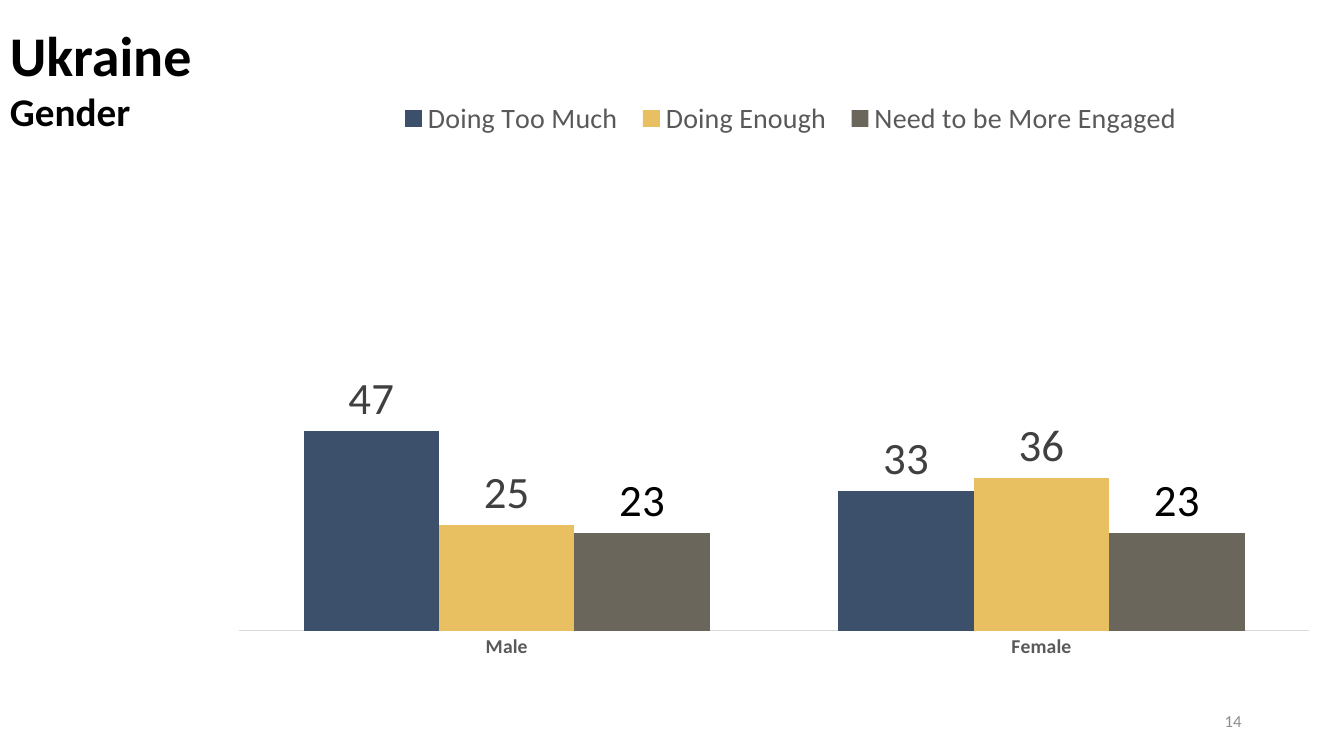
"""Build the Ukraine by gender column chart slide."""
import lxml.etree
import pptx
import pptx.chart.data
import pptx.dml.color
import pptx.enum.chart
import pptx.enum.text
import pptx.oxml
import pptx.oxml.ns
import pptx.util

Pt = pptx.util.Pt
qn = pptx.oxml.ns.qn


def rgb(color):
    return pptx.dml.color.RGBColor.from_string(color)


class Deck:
    font_name = "Calibri"
    text_color = "000000"
    axis_color = "595959"

    def __init__(self, width, height):
        self.prs = pptx.Presentation()
        self.prs.slide_width, self.prs.slide_height = Pt(width), Pt(height)
        self.s = self.prs.slides.add_slide(self.prs.slide_layouts[6])

    def style(self, font, size, color, bold=False):
        font.name = self.font_name
        font.size = Pt(size)
        font.bold = bold
        font.color.rgb = rgb(color)

    def text(self, box, lines, color=None, bold=False, align="LEFT", anchor="TOP"):
        tf = self.s.shapes.add_textbox(*map(Pt, box)).text_frame
        tf.word_wrap = True
        tf.vertical_anchor = pptx.enum.text.MSO_ANCHOR[anchor]
        tf.text = "\n".join(text for text, size in lines)
        for p, (text, size) in zip(tf.paragraphs, lines):
            p.alignment = pptx.enum.text.PP_ALIGN[align]
            for r in p.runs:
                self.style(r.font, size, color or self.text_color, bold)

    def layout(self, parent, index, box, inner=False):
        for old in parent.findall(qn("c:layout")):
            parent.remove(old)
        layout = parent.makeelement(qn("c:layout"))
        parent.insert(index, layout)
        manual = lxml.etree.SubElement(layout, qn("c:manualLayout"))
        settings = [("layoutTarget", "inner")] if inner else []
        settings += [("xMode", "edge"), ("yMode", "edge"), *zip("xywh", box)]
        for tag, value in settings:
            lxml.etree.SubElement(manual, qn("c:" + tag)).set("val", str(value))

    def columns(self, box, categories, series, plot_box, legend_box):
        data = pptx.chart.data.CategoryChartData()
        data.categories = categories
        for name, values, color, label_color in series:
            data.add_series(name, values)
        kind = pptx.enum.chart.XL_CHART_TYPE.COLUMN_CLUSTERED
        chart = self.s.shapes.add_chart(kind, *map(Pt, box), data).chart
        self.style(chart.font, 10, self.text_color)
        chart.has_title = False

        axis = chart.category_axis
        axis.major_tick_mark = pptx.enum.chart.XL_TICK_MARK.NONE
        axis.format.line.color.rgb = rgb("D9D9D9")
        axis.format.line.width = Pt(0.75)
        self.style(axis.tick_labels.font, 14, self.axis_color, True)
        value_axis = chart.value_axis
        value_axis.minimum_scale, value_axis.maximum_scale = 0, 100
        value_axis.has_major_gridlines = False
        value_axis.visible = False

        chart.has_legend = True
        legend = chart.legend
        legend.position = pptx.enum.chart.XL_LEGEND_POSITION.TOP
        legend.include_in_layout = False
        self.style(legend.font, 20, self.axis_color)

        plot = chart.plots[0]
        plot.gap_width, plot.overlap = 95, 0
        plot.vary_by_categories = False
        for ser, (name, values, color, label_color) in zip(plot.series, series):
            ser.format.fill.solid()
            ser.format.fill.fore_color.rgb = rgb(color)
            labels = ser.data_labels
            labels.show_value = True
            labels.position = pptx.enum.chart.XL_LABEL_POSITION.OUTSIDE_END
            self.style(labels.font, 32, label_color)

        plot_area = chart.element.find(".//" + qn("c:plotArea"))
        self.layout(plot_area, 0, plot_box, inner=True)
        self.layout(chart.element.find(".//" + qn("c:legend")), 1, legend_box)


def main():
    deck = Deck(960, 540)
    deck.columns(
        (160, 38, 786, 445),
        ["Male", "Female"],
        [
            ("Doing Too Much", (47, 33), "3C4F6B", "404040"),
            ("Doing Enough", (25, 36), "E8C062", "404040"),
            ("Need to be More Engaged", (23, 23), "6B665B", "000000"),
        ],
        plot_box=(0.014, 0.247, 0.972, 0.68),
        legend_box=(0.15, 0.06, 0.73, 0.09),
    )
    deck.text((0, 11, 595, 138), [("Ukraine", 40), ("Gender", 28)], bold=True)
    deck.text((678, 500, 216, 29), [("14", 12)], "8C8C8C", align="RIGHT", anchor="MIDDLE")
    deck.prs.save("out.pptx")


if __name__ == "__main__":
    main()
